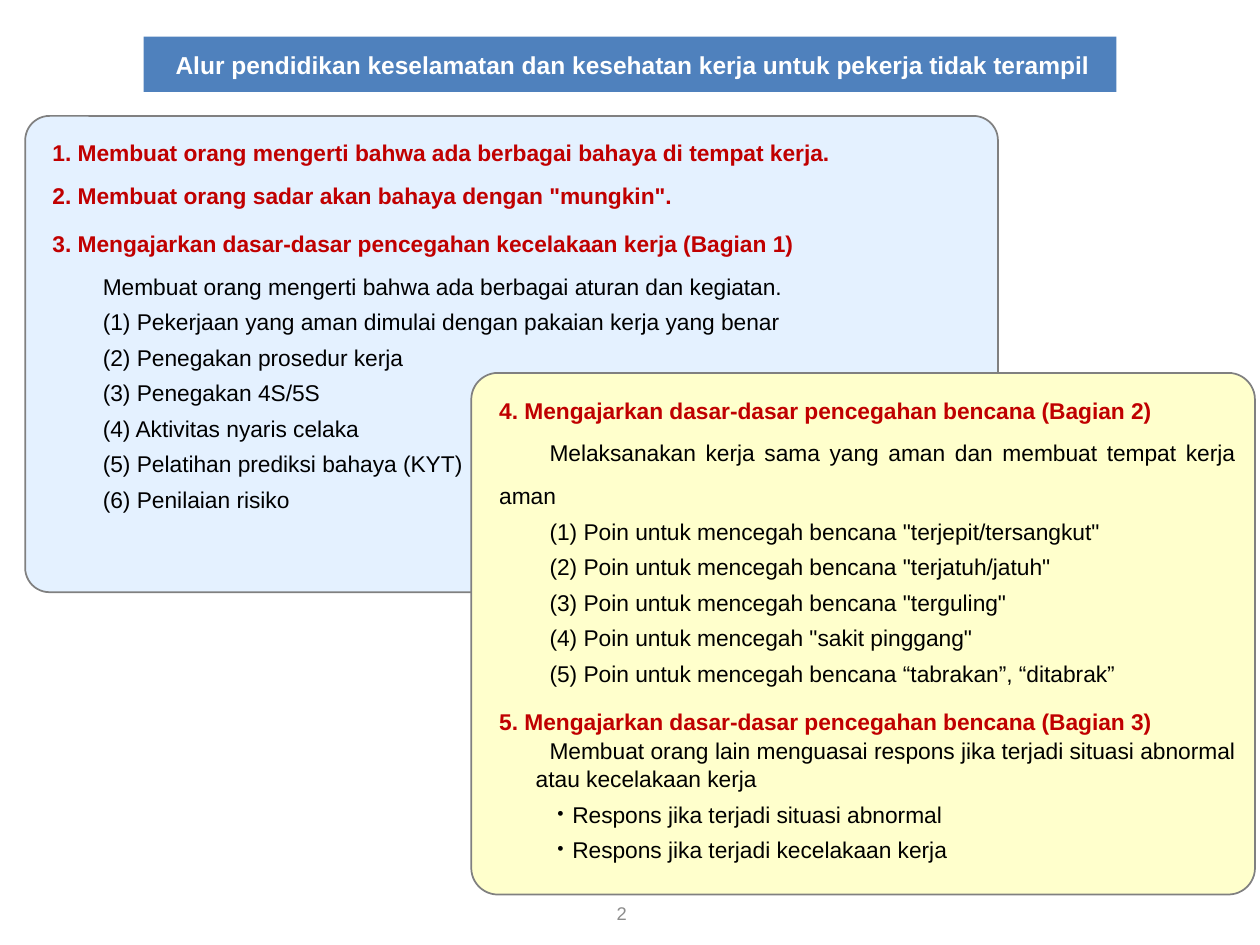
"""Builds the slide on the flow of safety training for unskilled workers."""
from lxml.etree import SubElement as Sub
from pptx import Presentation as Deck
from pptx.dml.color import RGBColor as Rgb
from pptx.enum.text import MSO_ANCHOR as Anchor, MSO_AUTO_SIZE as Auto, PP_ALIGN as Align
from pptx.oxml.ns import qn
from pptx.util import Inches, Pt


def paint(part, tint):
    part.rgb = Rgb.from_string(tint)


def place(box, spot, tint, curve):
    for name, size in zip(("left", "top", "width", "height"), spot):
        setattr(box, name, Inches(size))
    geom = Sub(box.element.spPr, qn("a:prstGeom"), prst="roundRect")
    guides = Sub(geom, qn("a:avLst"))
    Sub(guides, qn("a:gd"), name="adj", fmla=f"val {curve}")
    box.fill.solid()
    paint(box.fill.fore_color, tint)


kinds = {
    "head": dict(tint="C00000", bold=True, lead=1.57, left=0, first=0),
    "intro": dict(tint="000000", bold=False, lead=1.57, left=0.4, first=0),
    "wrap": dict(tint="000000", bold=False, lead=1.57, left=0, first=0.4),
    "item": dict(tint="000000", bold=False, lead=1.3, left=0.4, first=0),
    "note": dict(tint="000000", bold=False, lead=1.05, left=0.29, first=0.11),
    "dot": dict(tint="000000", bold=False, lead=1.3, left=0.58, first=-0.18),
}
kinds["gap"] = {**kinds["head"], "before": 3}

basic = [
    ("head", "1. Membuat orang mengerti bahwa ada berbagai bahaya di tempat kerja."),
    ("head", '2. Membuat orang sadar akan bahaya dengan "mungkin".'),
    ("gap", "3. Mengajarkan dasar-dasar pencegahan kecelakaan kerja (Bagian 1)"),
    ("intro", "Membuat orang mengerti bahwa ada berbagai aturan dan kegiatan."),
    ("item", "(1) Pekerjaan yang aman dimulai dengan pakaian kerja yang benar"),
    ("item", "(2) Penegakan prosedur kerja"),
    ("item", "(3) Penegakan 4S/5S"),
    ("item", "(4) Aktivitas nyaris celaka"),
    ("item", "(5) Pelatihan prediksi bahaya (KYT)"),
    ("item", "(6) Penilaian risiko"),
]
further = [
    ("gap", "4. Mengajarkan dasar-dasar pencegahan bencana (Bagian 2)"),
    ("wrap", "Melaksanakan kerja sama yang aman dan membuat tempat kerja aman"),
    ("item", '(1) Poin untuk mencegah bencana "terjepit/tersangkut"'),
    ("item", '(2) Poin untuk mencegah bencana "terjatuh/jatuh"'),
    ("item", '(3) Poin untuk mencegah bencana "terguling"'),
    ("item", '(4) Poin untuk mencegah "sakit pinggang"'),
    ("item", "(5) Poin untuk mencegah bencana “tabrakan”, “ditabrak”"),
    ("gap", "5. Mengajarkan dasar-dasar pencegahan bencana (Bagian 3)"),
    ("note", "Membuat orang lain menguasai respons jika terjadi situasi abnormal atau kecelakaan kerja"),
    ("dot", "Respons jika terjadi situasi abnormal"),
    ("dot", "Respons jika terjadi kecelakaan kerja"),
]

deck = Deck()
deck.slide_width, deck.slide_height = Inches(10), Inches(7.5)
slide = deck.slides.add_slide(deck.slide_layouts[3])
title, *panels = list(slide.placeholders)[:3]

place(title, (1.14, 0.29, 7.72, 0.44), "4F81BD", 16667)
frame = title.text_frame
frame.text = " Alur pendidikan keselamatan dan kesehatan kerja untuk pekerja tidak terampil"
frame.auto_size = Auto.NONE
frame.vertical_anchor = Anchor.MIDDLE
para = frame.paragraphs[0]
para.alignment = Align.CENTER
for name, value in dict(name="Arial", size=Pt(14), bold=True).items():
    setattr(para.font, name, value)
paint(para.font.color, "FFFFFF")

looks = [
    ((0.2, 0.92, 7.72, 3.78), "99CCFF", basic),
    ((3.74, 2.96, 6.22, 4.14), "FFFFCC", further),
]
for panel, (spot, tint, rows) in zip(panels, looks):
    place(panel, spot, tint, 5100)
    paint(panel.line.color, "808080")
    panel.line.width = Pt(1)
    frame = panel.text_frame
    edges = dict(margin_left=Inches(0.16), margin_top=0, margin_right=Inches(0.1),
                 margin_bottom=Inches(0.05), word_wrap=True, auto_size=Auto.NONE,
                 vertical_anchor=Anchor.TOP)
    for name, value in edges.items():
        setattr(frame, name, value)
    frame.text = "\n".join(text for kind, text in rows)
    for para, (kind, text) in zip(frame.paragraphs, rows):
        form = kinds[kind]
        para.alignment = Align.JUSTIFY
        para.line_spacing = form["lead"]
        para.space_before = Pt(form.get("before", 0))
        for name, value in dict(name="Arial", size=Pt(13), bold=form["bold"]).items():
            setattr(para.font, name, value)
        paint(para.font.color, form["tint"])
        props = para._p.get_or_add_pPr()
        props.set("marL", str(Inches(form["left"])))
        props.set("indent", str(Inches(form["first"])))
        mark = Sub(props, qn("a:buChar" if kind == "dot" else "a:buNone"))
        if kind == "dot":
            mark.set("char", "・")
        props.insert_element_before(mark, "a:tabLst", "a:defRPr", "a:extLst")

shade = panels[0].element.spPr.find(qn("a:solidFill"))[0]
Sub(shade, qn("a:alpha"), val="26000")

page = slide.shapes.add_textbox(Inches(3.77), Inches(7.05), Inches(2.33), Inches(0.4))
frame = page.text_frame
frame.word_wrap = True
frame.vertical_anchor = Anchor.MIDDLE
frame.text = "2"
para = frame.paragraphs[0]
para.alignment = Align.CENTER
for name, value in dict(name="Arial", size=Pt(10.5)).items():
    setattr(para.font, name, value)
paint(para.font.color, "8C8C8C")

deck.save("out.pptx")
